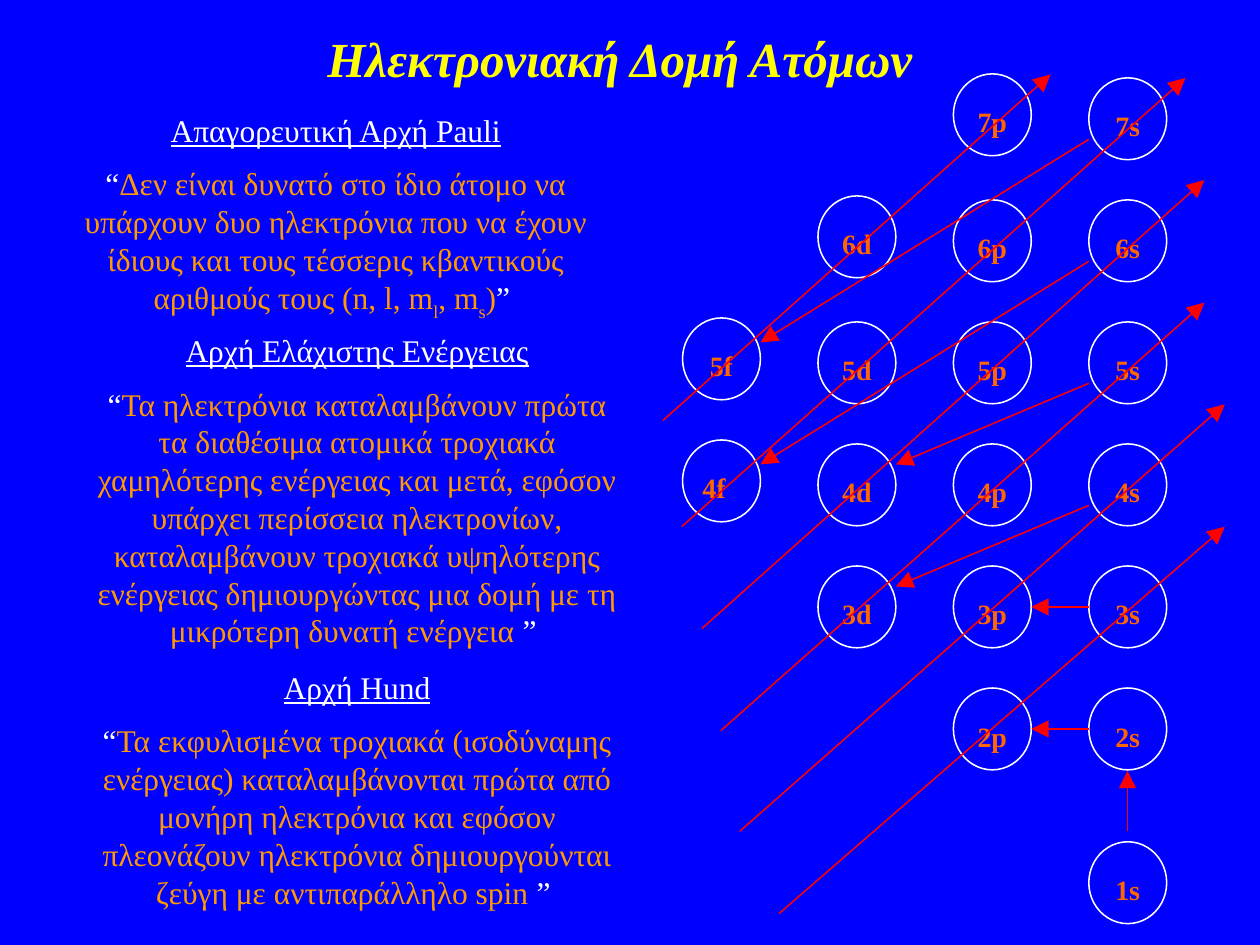
from dataclasses import dataclass

from lxml.etree import SubElement
from pptx import Presentation
from pptx.dml.color import RGBColor
from pptx.enum.shapes import MSO_CONNECTOR as Connector, MSO_SHAPE as Shape
from pptx.enum.text import MSO_ANCHOR as Anchor, MSO_AUTO_SIZE as AutoSize, PP_ALIGN as Align
from pptx.oxml.ns import qn
from pptx.util import Cm, Pt

FONT = "Times New Roman"
BLUE, YELLOW, WHITE = "0000FF", "FFFF00", "FFFFFF"
AMBER, ORANGE, RED = "FF9900", "FF6600", "FF0000"
LINE_WIDTH = Pt(0.88)

# Orbital grid in cm: one column per subshell, one row per shell
SUBSHELLS = "spdf"
S_LEFT, COLUMN_STEP = 21.95, 2.73
SHELL_7_TOP, ROW_STEP, SHELL_1_TOP = 1.57, 2.46, 16.97
ORBITAL_WIDTH, ORBITAL_HEIGHT = 1.57, 1.65
RAISED, RAISE = {"7p", "6d", "5f", "4f"}, 0.08


@dataclass
class Principle:
    left: float
    top: float
    height: float
    heading: str
    statement: list[tuple[str, bool]]  # text, is it a subscript


@dataclass
class Arrow:
    x1: float
    y1: float
    x2: float
    y2: float


PRINCIPLES = [
    Principle(1.27, 2.11, 4.45, "Απαγορευτική Αρχή Pauli", [
        ("Δεν είναι δυνατό στο ίδιο άτομο να υπάρχουν δυο ηλεκτρόνια που να έχουν "
         "ίδιους και τους τέσσερις κβαντικούς αριθμούς τους (n, l, m", False),
        ("l", True), (", m", False), ("s", True), (")", False)]),
    Principle(1.7, 6.55, 6.73, "Αρχή Ελάχιστης Ενέργειας", [
        ("Τα ηλεκτρόνια καταλαμβάνουν πρώτα τα διαθέσιμα ατομικά τροχιακά "
         "χαμηλότερης ενέργειας και μετά, εφόσον υπάρχει περίσσεια ηλεκτρονίων, "
         "καταλαμβάνουν τροχιακά υψηλότερης ενέργειας δημιουργώντας μια δομή με τη "
         "μικρότερη δυνατή ενέργεια ", False)]),
    Principle(1.7, 13.34, 5.21, "Αρχή Hund", [
        ("Τα εκφυλισμένα τροχιακά (ισοδύναμης ενέργειας) καταλαμβάνονται πρώτα από "
         "μονήρη ηλεκτρόνια και εφόσον πλεονάζουν ηλεκτρόνια δημιουργούνται ζεύγη με "
         "αντιπαράλληλο spin ", False)]),
]
ORBITALS = ["1s", "2s", "2p", "3s", "3p", "3d", "4s", "4p", "4d", "4f",
            "5s", "5p", "5d", "5f", "6s", "6p", "6d", "7s", "7p"]
DIAGONALS = [
    Arrow(15.7, 18.42, 24.69, 10.62),
    Arrow(14.91, 16.76, 24.69, 8.15),
    Arrow(14.53, 14.73, 24.28, 6.1),
    Arrow(14.15, 12.67, 24.28, 3.63),
    Arrow(13.74, 10.62, 23.9, 1.57),
    Arrow(13.36, 8.48, 21.18, 1.5),
]
FIRST_STEP = Arrow(22.73, 16.76, 22.73, 15.54)
RETURNS = [("2s", "2p"), ("3s", "3p"), ("4s", "3d"), ("5s", "4d"), ("6s", "4f"), ("7s", "5f")]


def rgb(hex_color: str) -> RGBColor:
    return RGBColor.from_string(hex_color)


def style(run, size: float, color: str, bold=False, italic=False, underline=False) -> None:
    font = run.font
    font.name, font.size = FONT, Pt(size)
    font.bold, font.italic, font.underline = bold, italic, underline
    font.color.rgb = rgb(color)


def grid_position(orbital: str) -> tuple[float, float]:
    """Left and top, in cm, of the grid cell of an orbital such as 3d."""
    shell, column = int(orbital[0]), SUBSHELLS.index(orbital[1])
    top = SHELL_1_TOP if shell == 1 else SHELL_7_TOP + (7 - shell) * ROW_STEP
    return S_LEFT - column * COLUMN_STEP, top


def return_arrow(source: str, target: str) -> Arrow:
    """Arrow from the left edge of an s orbital to the right edge of the next one."""
    x1, source_top = grid_position(source)
    target_left, target_top = grid_position(target)
    start, end = (0.5, 0.5) if source[0] == target[0] else (0.75, 0.25)
    return Arrow(x1, source_top + start * ORBITAL_HEIGHT,
                 target_left + ORBITAL_WIDTH, target_top + end * ORBITAL_HEIGHT)


def draw_title(slide, title: str) -> None:
    frame = slide.shapes.add_textbox(Cm(1.7), Cm(0.43), Cm(21.59), Cm(1.47)).text_frame
    frame.word_wrap, frame.vertical_anchor = True, Anchor.MIDDLE
    frame.text = title
    paragraph = frame.paragraphs[0]
    paragraph.alignment = Align.CENTER
    style(paragraph.runs[0], 28, YELLOW, bold=True, italic=True)


def draw_principle(slide, principle: Principle) -> None:
    frame = slide.shapes.add_textbox(Cm(principle.left), Cm(principle.top),
                                     Cm(11), Cm(principle.height)).text_frame
    frame.word_wrap, frame.auto_size = True, AutoSize.SHAPE_TO_FIT_TEXT
    frame.text = principle.heading
    heading, statement = frame.paragraphs[0], frame.add_paragraph()
    style(heading.runs[0], 18, WHITE, underline=True)
    parts = [("“", False, WHITE),
             *((text, subscript, AMBER) for text, subscript in principle.statement),
             ("” ", False, WHITE)]
    for text, subscript, color in parts:
        run = statement.add_run()
        run.text = text
        style(run, 18, color)
        if subscript:
            run._r.get_or_add_rPr().set("baseline", "-30000")
    for paragraph in (heading, statement):
        paragraph.alignment = Align.CENTER
        paragraph.space_before = Pt(9)


def draw_orbital(slide, orbital: str) -> None:
    left, top = grid_position(orbital)
    if orbital in RAISED:
        top -= RAISE
    circle = slide.shapes.add_shape(Shape.OVAL, Cm(left), Cm(top),
                                    Cm(ORBITAL_WIDTH), Cm(ORBITAL_HEIGHT))
    circle.shadow.inherit = False
    circle.fill.background()
    circle.line.color.rgb, circle.line.width = rgb(WHITE), LINE_WIDTH
    frame = circle.text_frame
    frame.margin_left = frame.margin_bottom = 0
    frame.margin_top = Cm(0.28)
    frame.margin_right = Cm(0.3 if orbital == "4f" else 0)
    frame.vertical_anchor = Anchor.MIDDLE
    frame.text = orbital
    frame.paragraphs[0].alignment = Align.CENTER
    style(frame.paragraphs[0].runs[0], 16, ORANGE, bold=True)


def draw_arrow(slide, arrow: Arrow) -> None:
    connector = slide.shapes.add_connector(Connector.STRAIGHT, Cm(arrow.x1), Cm(arrow.y1),
                                           Cm(arrow.x2), Cm(arrow.y2))
    connector.line.color.rgb, connector.line.width = rgb(RED), LINE_WIDTH
    SubElement(connector.line._get_or_add_ln(), qn("a:tailEnd"),
               type="triangle", w="lg", len="lg")
    SubElement(connector._element.spPr, qn("a:effectLst"))


def main() -> None:
    presentation = Presentation()
    presentation.slide_width, presentation.slide_height = Cm(25.4), Cm(19.05)
    slide = presentation.slides.add_slide(presentation.slide_layouts[6])
    slide.background.fill.solid()
    slide.background.fill.fore_color.rgb = rgb(BLUE)

    draw_title(slide, "Ηλεκτρονιακή Δομή Ατόμων")
    for principle in PRINCIPLES:
        draw_principle(slide, principle)
    for orbital in ORBITALS:
        draw_orbital(slide, orbital)
    for arrow in [FIRST_STEP, *DIAGONALS, *(return_arrow(*pair) for pair in RETURNS)]:
        draw_arrow(slide, arrow)

    presentation.save("out.pptx")


if __name__ == "__main__":
    main()
